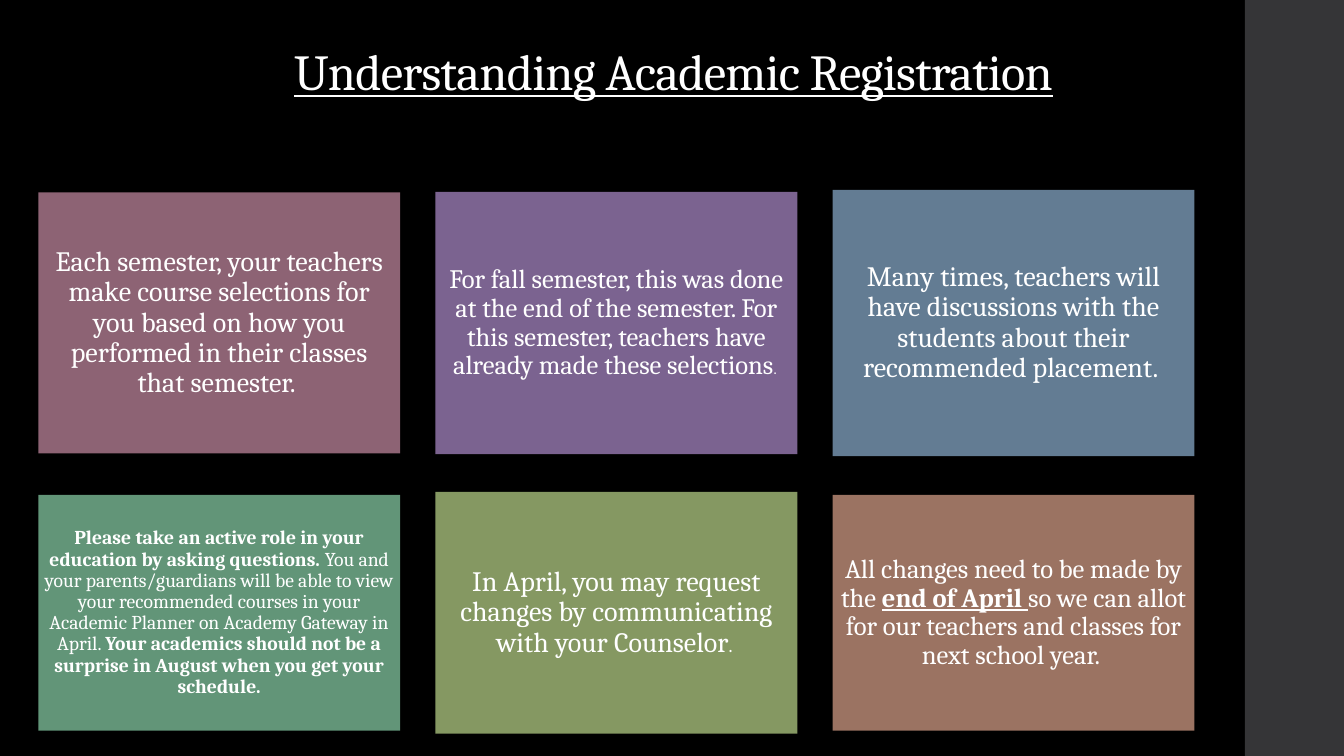
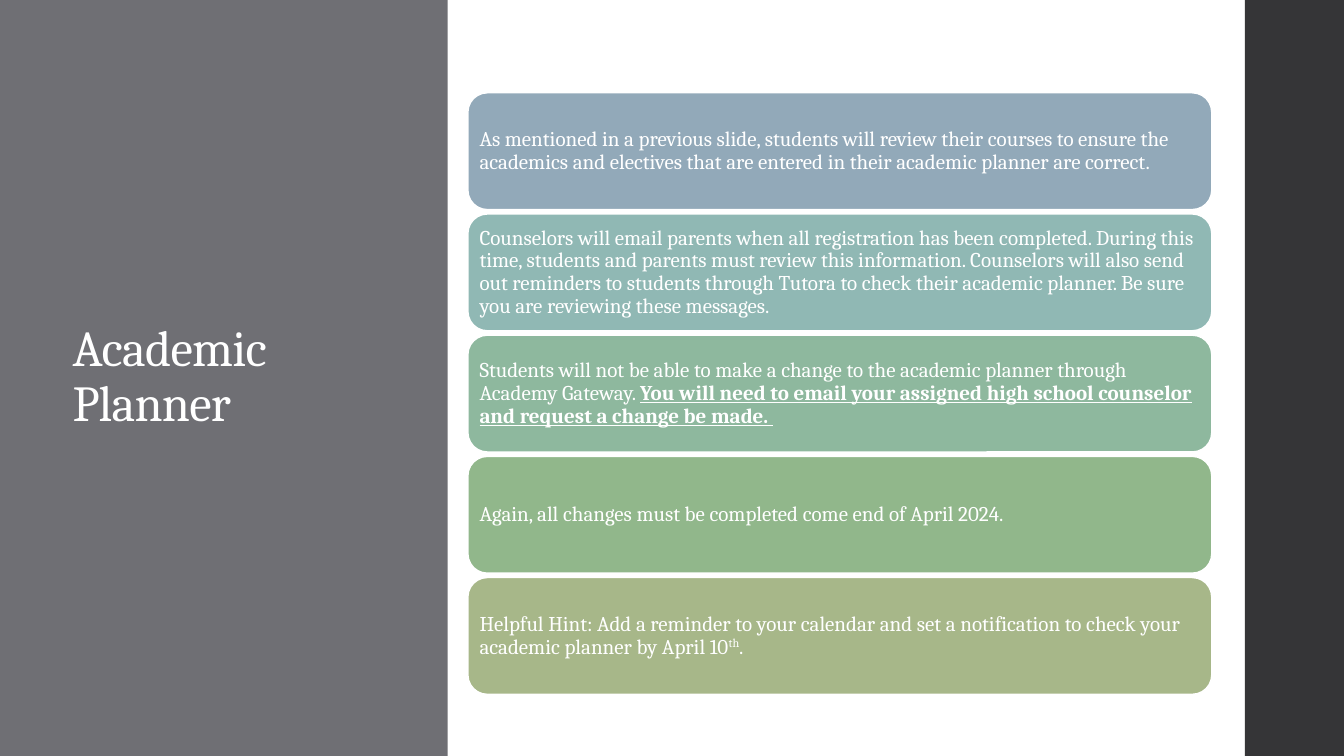
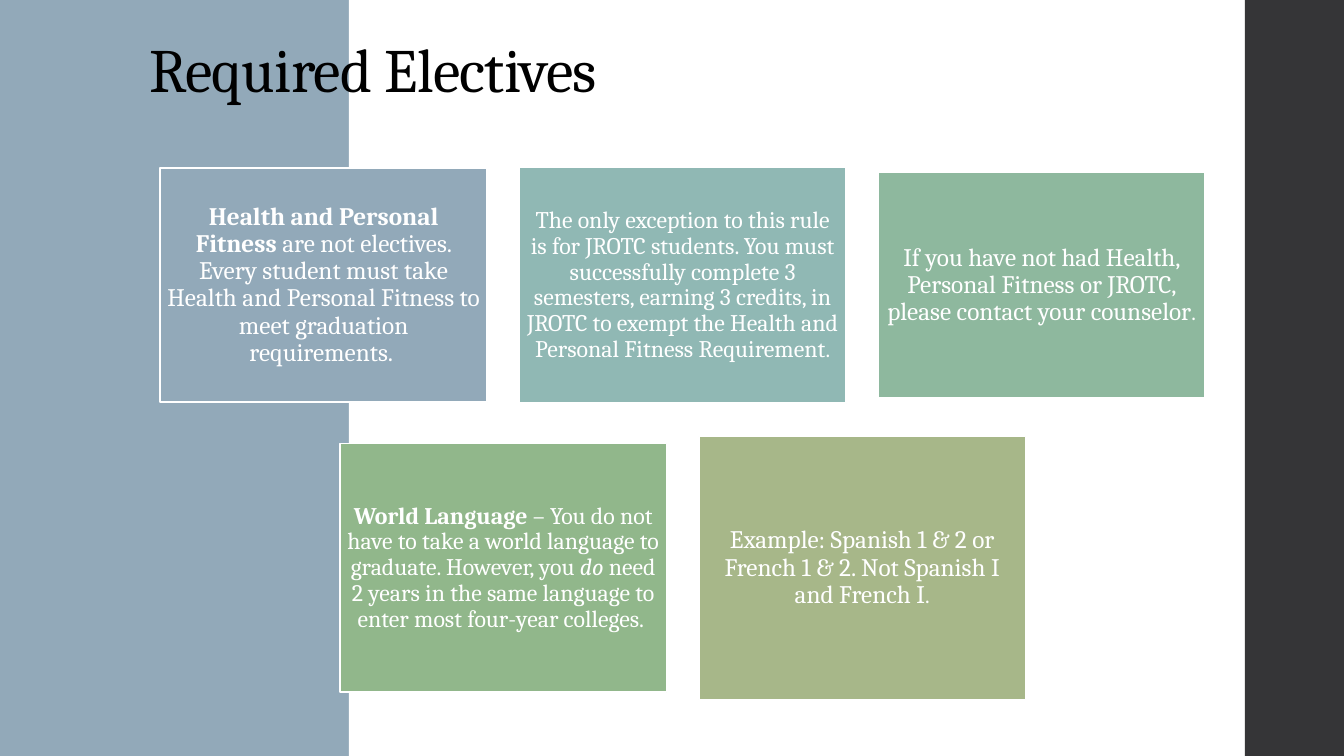
from dataclasses import dataclass
from typing import Optional

from pptx import Presentation
from pptx import util as u
from pptx.dml.color import RGBColor
from pptx.enum import shapes, text

COLOURS = {
    "white": "FFFFFF", "black": "000000", "charcoal": "353537", "grey": "6F6F74",
    "rose": "8D6374", "violet": "7B6390", "steel": "637C93",
    "jade": "629578", "moss": "859862", "clay": "9B7362",
    "blue": "92A9B9", "teal": "90B8B4", "mint": "8EB89E",
    "leaf": "91B78B", "olive": "A7B789",
}
FONT = "Cambria"
SLIDE_WIDTH, SLIDE_HEIGHT = u.Inches(13.33), u.Inches(7.5)
SIDEBAR_LEFT = 92.62
RECT = shapes.MSO_SHAPE.RECTANGLE
ROUNDED = shapes.MSO_SHAPE.ROUNDED_RECTANGLE
LEFT, CENTRE = text.PP_ALIGN.LEFT, text.PP_ALIGN.CENTER
MIDDLE, BOTTOM = text.MSO_ANCHOR.MIDDLE, text.MSO_ANCHOR.BOTTOM


# Descriptions; all lengths are percentages of the slide's width or height
@dataclass(frozen=True)
class Box:
    left: float
    top: float
    width: float
    height: float

    def emu(self) -> tuple[int, int, int, int]:
        return (int(SLIDE_WIDTH * self.left / 100), int(SLIDE_HEIGHT * self.top / 100),
                int(SLIDE_WIDTH * self.width / 100), int(SLIDE_HEIGHT * self.height / 100))


@dataclass(frozen=True)
class Band:
    left: float
    right: float
    colour: str


@dataclass(frozen=True)
class Title:
    wording: str
    box: Box
    size: float = 36
    colour: str = "white"
    align: text.PP_ALIGN = LEFT
    anchor: text.MSO_ANCHOR = MIDDLE
    underline: bool = False


@dataclass(frozen=True)
class Span:
    wording: str
    bold: bool = False
    italic: bool = False
    underline: bool = False
    size: Optional[float] = None
    superscript: bool = False


@dataclass(frozen=True)
class Card:
    column: float
    row: int
    height: float
    colour: str
    size: float
    spans: list[Span]
    inset: Optional[float] = None


@dataclass(frozen=True)
class Grid:
    """Cards are centred vertically on their row."""
    left: float
    first_centre: float
    card_width: float
    column_step: float
    row_step: float
    inset: float
    shape: shapes.MSO_SHAPE = RECT
    align: text.PP_ALIGN = CENTRE
    outline: float = 0

    def box(self, card: Card) -> Box:
        centre = self.first_centre + card.row * self.row_step
        return Box(self.left + card.column * self.column_step,
                   centre - card.height / 2, self.card_width, card.height)


@dataclass(frozen=True)
class Page:
    bands: list[Band]
    title: Title
    grid: Grid
    cards: list[Card]


# Drawing
def rgb(name: str) -> RGBColor:
    return RGBColor.from_string(COLOURS[name])


def style_run(run, size: float, colour: str) -> None:
    run.font.name = FONT
    run.font.size = u.Pt(size)
    run.font.color.rgb = rgb(colour)


def draw_block(slide, kind, box: Box, colour: str, outline: float = 0):
    block = slide.shapes.add_shape(kind, *box.emu())
    block.shadow.inherit = False
    block.fill.solid()
    block.fill.fore_color.rgb = rgb(colour)
    if outline:
        block.line.color.rgb = rgb("white")
        block.line.width = u.Pt(outline)
    else:
        block.line.fill.background()
    return block


def draw_title(slide, title: Title) -> None:
    heading = slide.shapes.title
    heading.left, heading.top, heading.width, heading.height = title.box.emu()
    slide.shapes.element.append(heading.element)  # in front of the bands
    frame = heading.text_frame
    frame.text = title.wording
    frame.word_wrap = True
    frame.auto_size = text.MSO_AUTO_SIZE.NONE
    frame.vertical_anchor = title.anchor
    paragraph = frame.paragraphs[0]
    paragraph.alignment = title.align
    paragraph.line_spacing = 0.9
    run = paragraph.runs[0]
    style_run(run, title.size, title.colour)
    run.font.underline = title.underline
    run._r.get_or_add_rPr().set("spc", "-50")


def draw_card(slide, grid: Grid, card: Card) -> None:
    block = draw_block(slide, grid.shape, grid.box(card), card.colour, grid.outline)
    frame = block.text_frame
    frame.word_wrap = True
    frame.vertical_anchor = MIDDLE
    inset = u.Inches(card.inset or grid.inset)
    frame.margin_left = frame.margin_right = inset
    frame.margin_top = frame.margin_bottom = inset
    paragraph = frame.paragraphs[0]
    paragraph.alignment = grid.align
    paragraph.line_spacing = 0.9
    for span in card.spans:
        run = paragraph.add_run()
        run.text = span.wording
        style_run(run, span.size or card.size, "white")
        run.font.bold = span.bold
        run.font.italic = span.italic
        run.font.underline = span.underline
        if span.superscript:
            run._r.get_or_add_rPr().set("baseline", "30000")


def draw_page(deck, page: Page) -> None:
    slide = deck.slides.add_slide(deck.slide_layouts[5])
    for band in [*page.bands, Band(SIDEBAR_LEFT, 100, "charcoal")]:
        draw_block(slide, RECT, Box(band.left, 0, band.right - band.left, 100), band.colour)
    draw_title(slide, page.title)
    for card in page.cards:
        draw_card(slide, page.grid, card)


# Content
REGISTRATION = Page(
    bands=[Band(0, SIDEBAR_LEFT, "black")],
    title=Title("Understanding Academic Registration", Box(10.35, 5.33, 79.52, 8.8),
                align=CENTRE, anchor=BOTTOM, underline=True),
    grid=Grid(left=2.85, first_centre=42.73, card_width=26.93,
              column_step=29.55, row_step=38.33, inset=0.08),
    cards=[
        Card(0, 0, 34.53, "rose", 20, [Span(
            "Each semester, your teachers make course selections for you based on how "
            "you performed in their classes that semester. ")]),
        Card(1, 0, 34.67, "violet", 19, [
            Span("For fall semester, this was done at the end of the semester. For this "
                 "semester, teachers have already made these selections"),
            Span(". ", size=11)]),
        Card(2, 0, 35.2, "steel", 20, [Span(
            "Many times, teachers will have discussions with the students about their "
            "recommended placement. ")]),
        Card(0, 1, 31.2, "jade", 14, [
            Span("Please take an active role in your education by asking questions. ",
                 bold=True),
            Span("You and your parents/guardians will be able to view your recommended "
                 "courses in your Academic Planner on Academy Gateway in April. "),
            Span("Your academics should not be a surprise in August when you get your "
                 "schedule.", bold=True)], inset=0.06),
        Card(1, 1, 32, "moss", 20, [
            Span("In April, you may request changes by communicating with your Counselor"),
            Span(". ", size=14)]),
        Card(2, 1, 31.2, "clay", 19, [
            Span("All changes need to be made by the "),
            Span("end of April ", bold=True, underline=True),
            Span("so we can allot for our teachers and classes for next school year. ")]),
    ],
)

PLANNER_NOTES = [
    ("blue", [Span("As mentioned in a previous slide, students will review their courses to "
                   "ensure the academics and electives that are entered in their academic "
                   "planner are correct.")]),
    ("teal", [Span("Counselors will email parents when all registration has been completed. "
                   "During this time, students and parents must review this information. "
                   "Counselors will also send out reminders to students through Tutora to "
                   "check their academic planner. Be sure you are reviewing these "
                   "messages.")]),
    ("mint", [Span("Students will not be able to make a change to the academic planner "
                   "through Academy Gateway. "),
              Span("You will need to email your assigned high school counselor and request "
                   "a change be made. ", bold=True, underline=True)]),
    ("leaf", [Span("Again, all changes must be completed come end of April 2024.")]),
    ("olive", [Span("Helpful Hint: Add a reminder to your calendar and set a notification to "
                    "check your academic planner by April 10"),
               Span("th", superscript=True), Span(".")]),
]

PLANNER = Page(
    bands=[Band(0, 33.31, "grey")],
    title=Title("Academic Planner", Box(4.65, 12.13, 22.28, 75.6)),
    grid=Grid(left=34.81, first_centre=20, card_width=55.36, column_step=0,
              row_step=16.03, inset=0.06, shape=ROUNDED, align=LEFT, outline=1.1),
    cards=[Card(0, row, 15.47, colour, 15, spans)
           for row, (colour, spans) in enumerate(PLANNER_NOTES)],
)

ELECTIVES = Page(
    bands=[Band(0, 25.96, "blue"), Band(25.96, SIDEBAR_LEFT, "white")],
    title=Title("Required Electives", Box(10.35, 1.6, 80.87, 13.07), size=44,
                colour="black", anchor=BOTTOM),
    grid=Grid(left=11.93, first_centre=37.73, card_width=24.31,
              column_step=26.71, row_step=37.4, inset=0.07, outline=1.35),
    cards=[
        Card(0, 0, 30.93, "blue", 18, [
            Span("Health and Personal Fitness ", bold=True),
            Span("are not electives. Every student must take Health and Personal Fitness "
                 "to meet graduation requirements. ")]),
        Card(1, 0, 31.2, "teal", 17, [
            Span("The only exception to this rule is for JROTC students. You must "
                 "successfully complete 3 semesters, earning 3 credits, in JROTC to exempt "
                 "the Health and Personal Fitness Requirement"),
            Span(".", size=16)]),
        Card(2, 0, 29.87, "mint", 18, [
            Span("If you have not had Health, Personal Fitness or JROTC, please contact "
                 "your counselor"),
            Span(".", size=16)]),
        Card(0.5, 1, 32.93, "leaf", 17, [
            Span("World Language ", bold=True),
            Span("– You do not have to take a world language to graduate. However, you "),
            Span("do", italic=True),
            Span(" need 2 years in the same language to enter most four-year colleges. ")]),
        Card(1.5, 1, 34.8, "olive", 18, [
            Span("Example: Spanish 1 & 2 or French 1 & 2. Not Spanish I and French I"),
            Span(".", size=16)]),
    ],
)


def main() -> None:
    deck = Presentation()
    deck.slide_width, deck.slide_height = SLIDE_WIDTH, SLIDE_HEIGHT
    for page in (REGISTRATION, PLANNER, ELECTIVES):
        draw_page(deck, page)
    deck.save("out.pptx")


if __name__ == "__main__":
    main()
